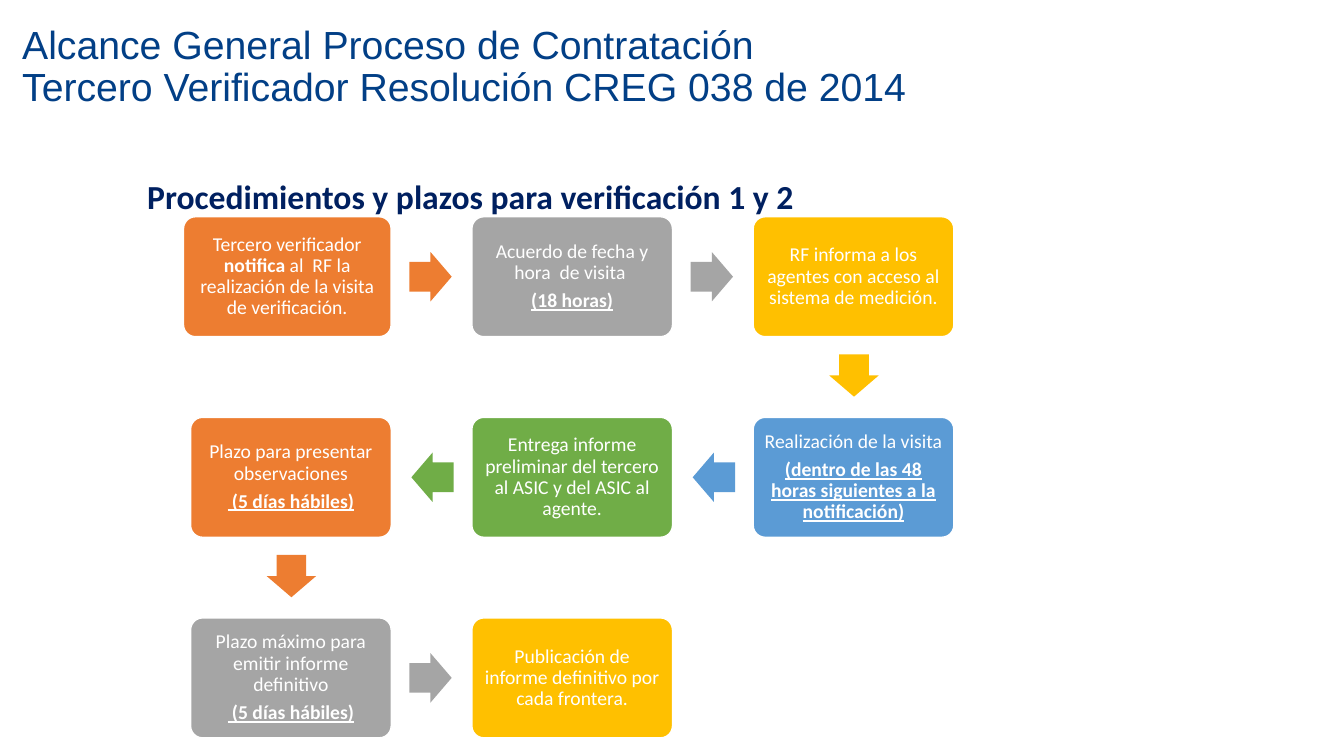
from dataclasses import dataclass
from enum import Enum
from typing import Any, Optional

from pptx import Presentation
from pptx.dml.color import RGBColor as Color
from pptx.enum.shapes import MSO_SHAPE as Kind
from pptx.enum.text import MSO_ANCHOR as Anchor, MSO_AUTO_SIZE as Fit, PP_ALIGN as Align
from pptx.util import Pt

PX = 9144

NAVY = Color(0x00, 0x20, 0x60)
BLUE = Color(0x02, 0x3F, 0x86)
WHITE = Color(0xFF, 0xFF, 0xFF)
ORANGE = Color(0xED, 0x7D, 0x31)
GRAY = Color(0xA5, 0xA5, 0xA5)
GOLD = Color(0xFF, 0xC0, 0x00)
SKY = Color(0x5B, 0x9B, 0xD5)
GREEN = Color(0x70, 0xAD, 0x47)

LEFT, TOP = 189, 215
STEP_X, STEP_Y = 279, 199
BOX_W, BOX_H = 199, 119
ARROW_W, ARROW_H = 42, 49


class Turn(Enum):
    EAST = (217, 35, 0)
    SOUTH = (79, 133, 90)
    WEST = (-60, 35, 180)


@dataclass(frozen=True)
class Bit:
    text: str
    bold: bool = False
    line: bool = False


@dataclass(frozen=True)
class Step:
    col: int
    row: int
    fill: Color
    paras: list[list[Bit]]
    turn: Optional[Turn] = None
    extra: int = 0


def term(text: str) -> list[Bit]:
    return [Bit(text, True, True)]


STEPS = [
    Step(0, 0, ORANGE, [[
        Bit("Tercero verificador "), Bit("notifica", True),
        Bit(" al  RF la realización de la visita de verificación."),
    ]], Turn.EAST, 7),
    Step(1, 0, GRAY, [[Bit("Acuerdo de fecha y hora  de visita ")],
                      term("(18 horas)")], Turn.EAST),
    Step(2, 0, GOLD, [[Bit("RF informa a los agentes con acceso al sistema de medición.")]],
         Turn.SOUTH),
    Step(2, 1, SKY, [[Bit("Realización de la visita ")],
                     term("(dentro de las 48 horas siguientes a la notificación)")],
         Turn.WEST),
    Step(1, 1, GREEN, [[Bit("Entrega informe preliminar del tercero al ASIC "
                            "y del ASIC al agente.")]], Turn.WEST),
    Step(0, 1, ORANGE, [[Bit("Plazo para presentar observaciones")],
                        term(" (5 días hábiles)")], Turn.SOUTH),
    Step(0, 2, GRAY, [[Bit("Plazo máximo para emitir informe definitivo")],
                      term(" (5 días hábiles)")], Turn.EAST),
    Step(1, 2, GOLD, [[Bit("Publicación de informe definitivo por cada frontera.")]]),
]


def put(item: Any, form: dict[str, Any]) -> None:
    for key, value in form.items():
        setattr(item, key, value)


def frame(body: Any, anchor: Anchor, pad: int, top: int) -> None:
    put(body, {
        "word_wrap": True, "auto_size": Fit.NONE, "vertical_anchor": anchor,
        "margin_left": pad * PX, "margin_right": pad * PX,
        "margin_top": top * PX, "margin_bottom": top * PX,
    })


def write(para: Any, bit: Bit, face: str, size: int, ink: Color) -> None:
    run = para.add_run()
    run.text = bit.text
    put(run.font, {"name": face, "size": Pt(size), "bold": bit.bold,
                   "underline": bit.line})
    run.font.color.rgb = ink


def block(slide: Any, kind: Kind, x: int, y: int, w: int, h: int, fill: Color) -> Any:
    shape = slide.shapes.add_shape(kind, x * PX, y * PX, w * PX, h * PX)
    shape.shadow.inherit = False
    shape.fill.solid()
    shape.fill.fore_color.rgb = fill
    shape.line.fill.background()
    return shape


def draw_step(slide: Any, step: Step) -> None:
    x = LEFT + step.col * STEP_X
    y = TOP + step.row * STEP_Y
    box = block(slide, Kind.ROUNDED_RECTANGLE, x - step.extra, y,
                BOX_W + step.extra, BOX_H, step.fill)
    box.adjustments[0] = 0.1
    box.line.color.rgb = WHITE
    box.line.width = Pt(1)
    body = box.text_frame
    frame(body, Anchor.MIDDLE, 6, 6)
    for at, bits in enumerate(step.paras):
        para = body.add_paragraph() if at else body.paragraphs[0]
        put(para, {"alignment": Align.CENTER, "line_spacing": 0.9,
                   "space_after": Pt(5)})
        for bit in bits:
            write(para, bit, "Calibri", 14, WHITE)
    if step.turn:
        dx, dy, angle = step.turn.value
        arrow = block(slide, Kind.RIGHT_ARROW, x + dx, y + dy,
                      ARROW_W, ARROW_H, step.fill)
        arrow.adjustments[0] = 0.6
        arrow.adjustments[1] = 0.5
        arrow.rotation = angle


def draw_title(slide: Any) -> None:
    title = slide.shapes.title
    put(title, {"left": 12 * PX, "top": 17 * PX,
                "width": 970 * PX, "height": 137 * PX})
    frame(title.text_frame, Anchor.TOP, 10, 8)
    para = title.text_frame.paragraphs[0]
    put(para, {"alignment": Align.LEFT, "line_spacing": 0.9})
    write(para, Bit("Alcance General Proceso de Contratación"), "Arial", 28, BLUE)
    para.add_line_break()
    write(para, Bit("Tercero Verificador Resolución CREG 038 de 2014"),
          "Arial", 28, BLUE)


def draw_head(slide: Any) -> None:
    head = slide.shapes.add_textbox(146 * PX, 175 * PX, 758 * PX, 40 * PX)
    frame(head.text_frame, Anchor.TOP, 0, 0)
    write(head.text_frame.paragraphs[0],
          Bit("Procedimientos y plazos para verificación 1 y 2", True),
          "Calibri", 24, NAVY)


def main() -> None:
    deck = Presentation()
    put(deck, {"slide_width": 1333 * PX, "slide_height": 750 * PX})
    slide = deck.slides.add_slide(deck.slide_layouts.get_by_name("Title Only"))
    draw_title(slide)
    draw_head(slide)
    for step in STEPS:
        draw_step(slide, step)
    deck.save("out.pptx")


if __name__ == "__main__":
    main()
